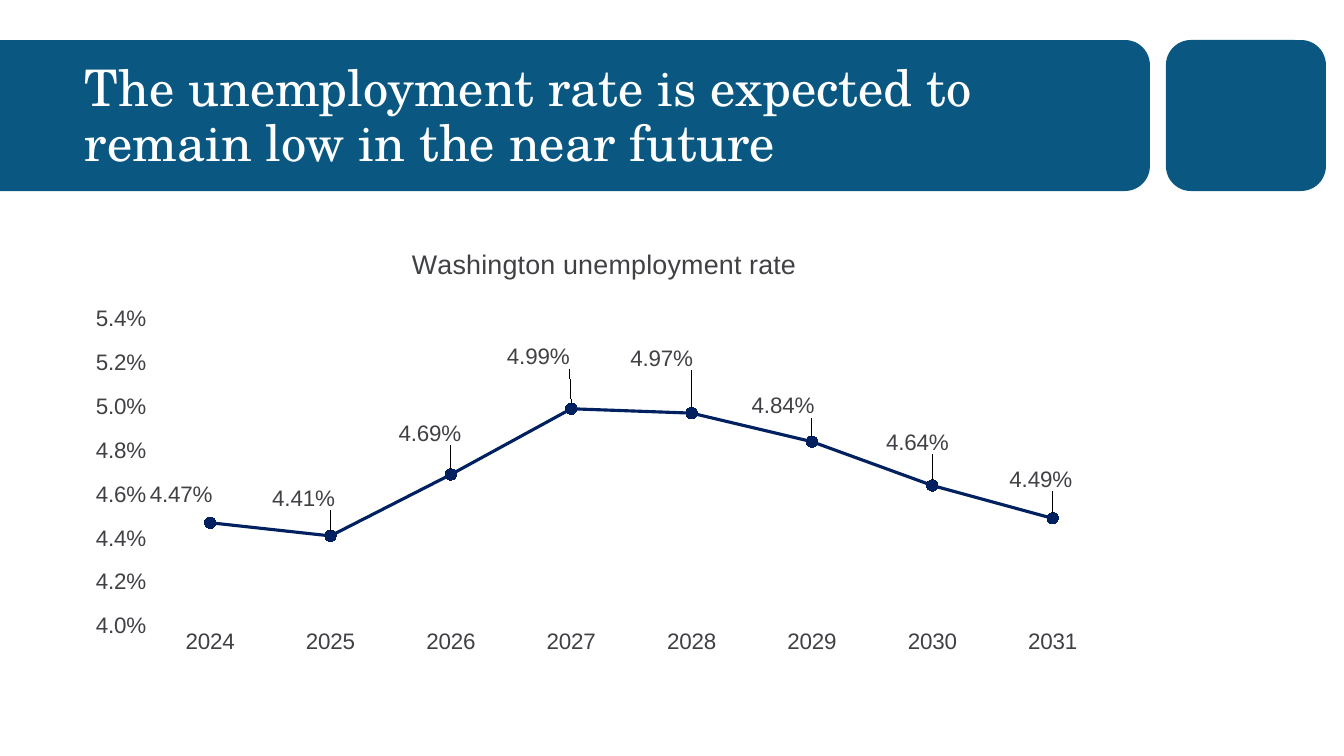
from math import cos, pi, sin

from lxml.etree import SubElement
from pptx import Presentation
from pptx.chart.data import CategoryChartData as Data
from pptx.dml.color import RGBColor
from pptx.enum.chart import XL_CHART_TYPE as Kind
from pptx.enum.chart import XL_LABEL_POSITION as Spot
from pptx.enum.chart import XL_MARKER_STYLE as Mark
from pptx.enum.chart import XL_TICK_MARK as Tick
from pptx.enum.shapes import MSO_SHAPE as Form
from pptx.enum.text import MSO_ANCHOR as Anchor
from pptx.oxml.ns import qn
from pptx.util import Pt

SCALE = 914400 / 100.8
TEAL = RGBColor(0x0A, 0x58, 0x82)
NAVY = RGBColor(0x00, 0x20, 0x60)
GRAY = RGBColor(0x40, 0x41, 0x44)
WHITE = RGBColor(0xFF, 0xFF, 0xFF)

NAME = "Washington unemployment rate"
RATES = [0.0447, 0.0441, 0.0469, 0.0499, 0.0497, 0.0484, 0.0464, 0.0449]
SHIFTS = [(-29, -6), (-27, -16), (-21, -19), (-33, -30),
          (-30, -33), (-29, -14), (-15, -21), (-12, -17)]


def px(n):
    return round(n * SCALE)


def paint(shape):
    shape.shadow.inherit = False
    shape.fill.solid()
    shape.fill.fore_color.rgb = TEAL
    shape.line.fill.background()


def style(font, size, color, face="Arial"):
    font.size = Pt(size)
    font.name = face
    font.bold = False
    font.color.rgb = color


def banner(slide, x, y, w, h):
    bend, gap, tile = 25, 16, 160
    right = x + w - gap - tile
    arcs = []
    for mid, start in ((y + bend, -pi / 2), (y + h - bend, 0)):
        for step in range(13):
            turn = start + step * pi / 24
            arcs.append((px(right - bend + bend * cos(turn)),
                         px(mid + bend * sin(turn))))
    path = slide.shapes.build_freeform(px(x), px(y), scale=1.0)
    path.add_line_segments(arcs + [(px(x), px(y + h))], close=True)
    paint(path.convert_to_shape())

    block = slide.shapes.add_shape(
        Form.ROUNDED_RECTANGLE, px(right + gap), px(y), px(tile), px(h))
    block.adjustments[0] = bend / h
    paint(block)


def heading(slide, x, y, w, h):
    frame = slide.shapes.add_textbox(px(x), px(y), px(w), px(h)).text_frame
    frame.word_wrap = True
    frame.vertical_anchor = Anchor.MIDDLE
    para = frame.paragraphs[0]
    para.line_spacing = 0.9
    run = para.add_run()
    run.text = "The unemployment rate is expected to remain low in the near future"
    style(run.font, 36, WHITE, "TeX Gyre Schola")


def place(layout, **parts):
    box = SubElement(layout, qn("c:manualLayout"))
    for tag, val in parts.items():
        SubElement(box, qn("c:" + tag)).set("val", str(val))


def trend(slide, x, y, w, h):
    data = Data(number_format="0.00%")
    data.categories = [str(year) for year in range(2024, 2032)]
    data.add_series(NAME, RATES)
    chart = slide.shapes.add_chart(
        Kind.LINE_MARKERS, px(x), px(y), px(w), px(h), data).chart
    style(chart.font, 16, GRAY)
    chart.has_legend = False
    chart.has_title = True
    run = chart.chart_title.text_frame.paragraphs[0].add_run()
    run.text = NAME
    style(run.font, 19.2, GRAY)

    area = chart.plots[0]
    area.vary_by_categories = False
    zone = chart._chartSpace.chart.plotArea
    layout = zone.find(qn("c:layout"))
    if layout is None:
        layout = SubElement(zone, qn("c:layout"))
        zone.insert(0, layout)
    place(layout, layoutTarget="inner", xMode="edge", yMode="edge",
          x=round(75 / w, 4), y=round(70 / h, 4),
          w=round(963 / w, 4), h=round(329 / h, 4))

    axes(chart)
    line = area.series[0]
    line.smooth = False
    line.format.line.color.rgb = NAVY
    line.format.line.width = Pt(2.25)
    line.marker.style = Mark.CIRCLE
    line.marker.size = 8
    line.marker.format.fill.solid()
    line.marker.format.fill.fore_color.rgb = NAVY
    line.marker.format.line.color.rgb = NAVY
    labels(line, w, h)


def axes(chart):
    for axis in (chart.category_axis, chart.value_axis):
        axis.major_tick_mark = axis.minor_tick_mark = Tick.NONE
        style(axis.tick_labels.font, 16, GRAY)
    base = chart.category_axis.format.line
    base.color.rgb = WHITE
    base.width = Pt(0.75)
    rate = chart.value_axis
    rate.minimum_scale = 0.04
    rate.maximum_scale = 0.055
    rate.major_unit = 0.002
    rate.format.line.fill.background()
    rate.tick_labels.number_format = "0.0%"
    rate.tick_labels.number_format_is_linked = False
    grid = rate.major_gridlines.format.line
    grid.color.rgb = WHITE
    grid.width = Pt(0.75)


def labels(line, w, h):
    tags = line.data_labels
    tags.show_value = True
    tags.number_format = "0.00%"
    tags.number_format_is_linked = False
    tags.position = Spot.ABOVE
    style(tags.font, 16, GRAY)
    for i, (dx, dy) in enumerate(SHIFTS):
        label = line.points[i].data_label
        style(label.font, 16, GRAY)
        label.position = Spot.ABOVE
        node = tags._element.findall(qn("c:dLbl"))[i]
        layout = SubElement(node, qn("c:layout"))
        node.insert(1, layout)
        place(layout, x=round(dx / w, 4), y=round(dy / h, 4))


def main():
    deck = Presentation()
    deck.slide_width, deck.slide_height = px(1344), px(756)
    slide = deck.slides.add_slide(deck.slide_layouts[6])
    banner(slide, 0, 40, 1326, 151)
    heading(slide, 75, 58, 1059, 119)
    trend(slide, 75, 227, 1059, 435)
    deck.save("out.pptx")


if __name__ == "__main__":
    main()
